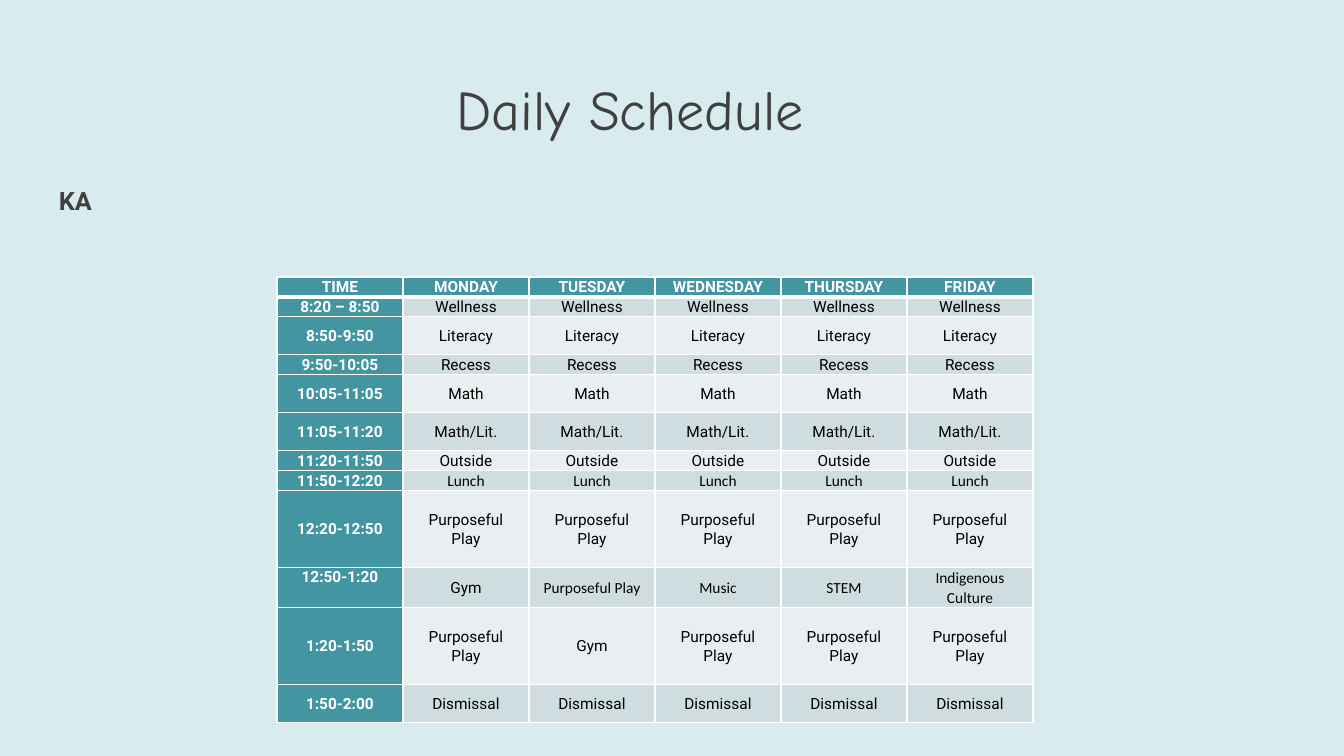
from lxml import etree
from pptx import Presentation
from pptx import util as u
from pptx.dml.color import RGBColor
from pptx.enum import text
from pptx.oxml import ns

DAYS = ["MONDAY", "TUESDAY", "WEDNESDAY", "THURSDAY", "FRIDAY"]
PLAY = "Purposeful Play"
SCHEDULE = [
    ("TIME", 19, DAYS),
    ("8:20 – 8:50", 20, ["Wellness"] * 5),
    ("8:50-9:50", 38, ["Literacy"] * 5),
    ("9:50-10:05", 19, ["Recess"] * 5),
    ("10:05-11:05", 38, ["Math"] * 5),
    ("11:05-11:20", 38, ["Math/Lit."] * 5),
    ("11:20-11:50", 20, ["Outside"] * 5),
    ("11:50-12:20", 20, ["Lunch"] * 5),
    ("12:20-12:50", 77, [PLAY] * 5),
    ("12:50-1:20", 40, ["Gym", PLAY, "Music", "STEM", "Indigenous Culture"]),
    ("1:20-1:50", 77, [PLAY, "Gym", PLAY, PLAY, PLAY]),
    ("1:50-2:00", 38, ["Dismissal"] * 5),
]
CALIBRI_FROM = {"11:50-12:20": 1, "12:50-1:20": 2}
TOP_TIMES = {"TIME", "12:50-1:20"}
TEAL, WHITE, BLACK, GREY = "4495A2", "FFFFFF", "000000", "404040"
BANDS = ["E9EFF0", "CFDDE0"]
TITLE_BOX = (277, 75, 706, 75)
CLASS_BOX = (49, 184, 1251, 562)
TABLE_LEFT, TABLE_TOP, COL_WIDTH = 277, 277, 126
MARGINS = {"margin_left": 10, "margin_right": 10, "margin_top": 0, "margin_bottom": 0}


def px(n):
    return round(n * 914400 / 100.8)


def color(value):
    return RGBColor.from_string(value)


def write(tf, words, spacing, align, ink, **font):
    tf.text = words
    p = tf.paragraphs[0]
    p.line_spacing = spacing
    p.alignment = align
    r = p.runs[0]
    for name, value in font.items():
        setattr(r.font, name, value)
    r.font.color.rgb = color(ink)


def border(cell, side, points):
    ln = etree.SubElement(cell._tc.get_or_add_tcPr(), ns.qn("a:ln" + side), w=str(u.Pt(points)))
    fill = etree.SubElement(ln, ns.qn("a:solidFill"))
    etree.SubElement(fill, ns.qn("a:srgbClr"), val=WHITE)


def main():
    prs = Presentation()
    prs.slide_width, prs.slide_height = px(1344), px(756)
    s = prs.slides.add_slide(prs.slide_layouts[5])
    s.background.fill.solid()
    s.background.fill.fore_color.rgb = color("D8EBEE")

    title = s.shapes.title
    title.left, title.top, title.width, title.height = map(px, TITLE_BOX)
    title.text_frame.vertical_anchor = text.MSO_ANCHOR.MIDDLE
    write(title.text_frame, "Daily Schedule", 0.9, text.PP_ALIGN.CENTER, GREY,
          name="Comic Neue", size=u.Pt(40))

    class_name = s.shapes.add_textbox(*map(px, CLASS_BOX))
    class_name.text_frame.word_wrap = True
    write(class_name.text_frame, "KA", 0.9, text.PP_ALIGN.LEFT, GREY,
          name="Roboto", size=u.Pt(18), bold=True)

    cols = len(DAYS) + 1
    height = sum(row[1] for row in SCHEDULE)
    table = s.shapes.add_table(len(SCHEDULE), cols, px(TABLE_LEFT), px(TABLE_TOP),
                               px(COL_WIDTH * cols), px(height)).table
    for col in table.columns:
        col.width = px(COL_WIDTH)

    for i, (time, row_height, subjects) in enumerate(SCHEDULE):
        table.rows[i].height = px(row_height)
        for j, words in enumerate([time] + subjects):
            cell = table.cell(i, j)
            for name, value in MARGINS.items():
                setattr(cell, name, px(value))
            at_top = j == 0 and time in TOP_TIMES
            cell.vertical_anchor = text.MSO_ANCHOR.TOP if at_top else text.MSO_ANCHOR.MIDDLE
            heading = i == 0 or j == 0
            font = "Calibri" if j >= CALIBRI_FROM.get(time, cols) else "Roboto"
            write(cell.text_frame, words, 1.07, text.PP_ALIGN.CENTER,
                  WHITE if heading else BLACK, name=font, size=u.Pt(11), bold=heading)
            for side in "LRTB":
                border(cell, side, 3 if (i, side) in [(0, "B"), (1, "T")] else 1)
            cell.fill.solid()
            cell.fill.fore_color.rgb = color(TEAL if heading else BANDS[i % 2])

    prs.save("out.pptx")


if __name__ == "__main__":
    main()
